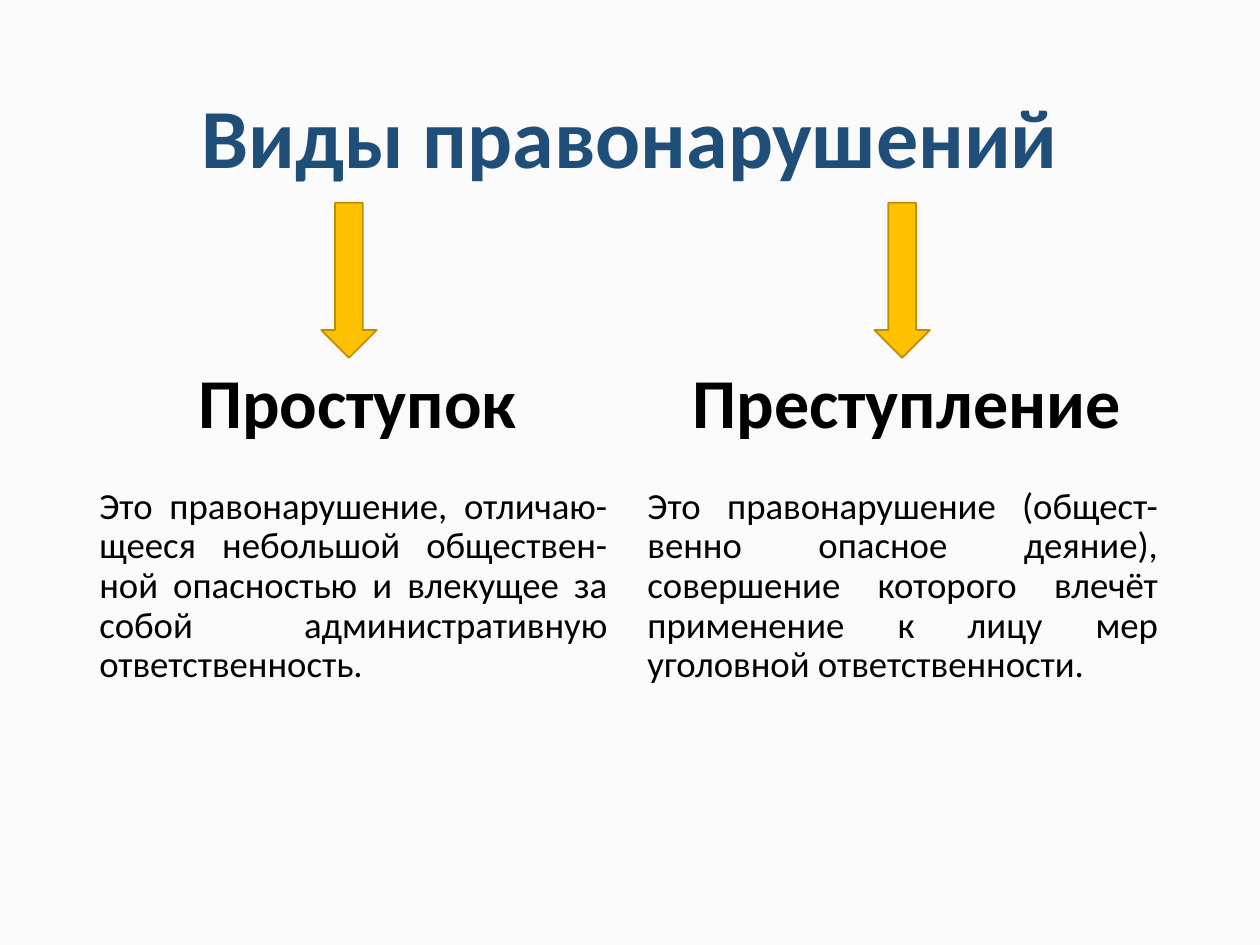
from pptx import Presentation
from pptx import util as u
from pptx.dml.color import RGBColor
from pptx.enum import shapes, text

HUES = {"back": "FAFAFA", "title": "1F4E79", "ink": "000000",
        "arrow": "FFC000", "edge": "BD8E00"}
MID, LOW, TOP = (text.MSO_ANCHOR.MIDDLE, text.MSO_ANCHOR.BOTTOM,
                 text.MSO_ANCHOR.TOP)
KINDS = {
    "title": dict(size=48, bold=True, hue="title", anchor=MID,
                  align=text.PP_ALIGN.CENTER),
    "head": dict(size=40, bold=True, hue="ink", anchor=LOW,
                 align=text.PP_ALIGN.CENTER),
    "body": dict(size=21, bold=False, hue="ink", anchor=TOP,
                 align=text.PP_ALIGN.JUSTIFY),
}
# Box, arrow offset, heading and definition of each kind of offence
COLUMNS = [
    ((0.69, 1.61, 4.23, 6.31), 1.86, "Проступок",
     "Это правонарушение, отличаю-щееся небольшой обществен-ной "
     "опасностью и влекущее за собой административную ответственность."),
    ((5.04, 1.61, 4.25, 6.24), 1.9, "Преступление",
     "Это правонарушение (общест-венно опасное деяние), совершение "
     "которого влечёт применение к лицу мер уголовной ответственности."),
]


def color(name):
    return RGBColor.from_string(HUES[name])


def write(slide, box, words, kind):
    """Add a wrapped text box in one of the styles in KINDS."""
    form = KINDS[kind]
    frame = slide.shapes.add_textbox(*map(u.Inches, box)).text_frame
    frame.word_wrap = True
    frame.vertical_anchor = form["anchor"]
    para = frame.paragraphs[0]
    para.alignment = form["align"]
    para.line_spacing = 0.9
    run = para.add_run()
    run.text = words
    font = {"name": "Calibri", "size": u.Pt(form["size"]),
            "bold": form["bold"]}
    for key, value in font.items():
        setattr(run.font, key, value)
    run.font.color.rgb = color(form["hue"])


def arrow(slide, box):
    shape = slide.shapes.add_shape(shapes.MSO_SHAPE.DOWN_ARROW,
                                   *map(u.Inches, box))
    shape.shadow.inherit = False
    shape.fill.solid()
    shape.fill.fore_color.rgb = color("arrow")
    shape.line.color.rgb = color("edge")
    shape.line.width = u.Pt(1)


def column(slide, box, shift, head, body):
    """Stack an arrow, a heading and a definition inside the box."""
    left, top, width, height = box
    drop = 2.21
    arrow(slide, (left + shift, top, 0.44, 1.23))
    write(slide, (left + 0.03, top + 1.06, width, 0.9), head, "head")
    write(slide, (left, top + drop, width, height - drop), body, "body")


def main():
    deck = Presentation()
    deck.slide_width, deck.slide_height = u.Inches(10), u.Inches(7.5)
    slide = deck.slides.add_slide(deck.slide_layouts[6])
    slide.background.fill.solid()
    slide.background.fill.fore_color.rgb = color("back")
    write(slide, (0.69, 0.4, 8.62, 1.45), "Виды правонарушений", "title")
    for part in COLUMNS:
        column(slide, *part)
    deck.save("out.pptx")


if __name__ == "__main__":
    main()
